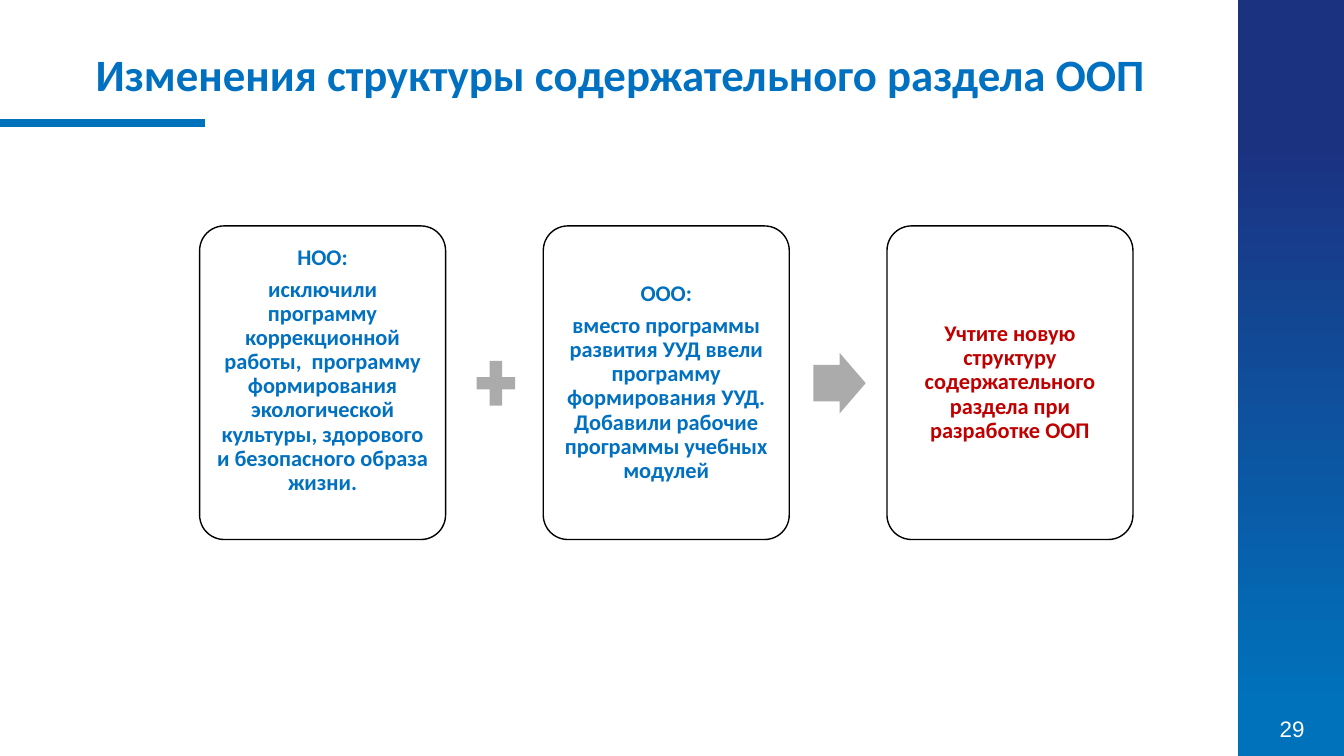
from lxml.etree import SubElement
from pptx import Presentation
from pptx.dml.color import RGBColor
from pptx.enum.shapes import MSO_CONNECTOR, MSO_SHAPE
from pptx.enum.text import MSO_ANCHOR, PP_ALIGN
from pptx.oxml.ns import qn
from pptx.util import Pt

BLUE = "0070C0"
RED = "C00000"
WHITE = "FFFFFF"
GREY = "ABABAB"
CARD_LEFT, CARD_TOP, CARD_WIDTH, CARD_HEIGHT = 142.6, 161.4, 175.7, 224
CARD_STEP = 245.5
SIGN_LEFT, SIGN_TOP, SIGN_WIDTH, SIGN_HEIGHT = 335.5, 252, 37.4, 43.4
CARD_INSET = 5
BLANK_LINE = 17.5

CARDS = [
    (["НОО:", "исключили программу коррекционной работы,  программу формирования "
      "экологической культуры, здорового и безопасного образа жизни."], BLUE, BLANK_LINE),
    (["ООО:", "вместо программы развития УУД ввели программу формирования УУД. "
      "Добавили рабочие программы учебных модулей"], BLUE, 0),
    (["Учтите новую структуру содержательного раздела при разработке ООП"], RED, 0),
]
SIGNS = [MSO_SHAPE.MATH_PLUS, MSO_SHAPE.RIGHT_ARROW]

TITLE_FONT = {"name": "Calibri", "size": Pt(32), "bold": True}
CARD_FONT = {"name": "Calibri", "size": Pt(16), "bold": True}
NUMBER_FONT = {"name": "Arial", "size": Pt(16), "bold": False}
CARD_PARAGRAPH = {"alignment": PP_ALIGN.CENTER, "line_spacing": 0.9, "space_after": Pt(5.6)}


def color(value):
    return RGBColor.from_string(value)


def apply(target, values):
    for name, value in values.items():
        setattr(target, name, value)


def write(shape, texts, font, font_color, paragraph_format, frame_format):
    frame = shape.text_frame
    apply(frame, {"word_wrap": True, **frame_format})
    frame.text = "\n".join(texts)
    for paragraph in frame.paragraphs:
        apply(paragraph, paragraph_format)
        apply(paragraph.font, font)
        paragraph.font.color.rgb = color(font_color)


def add_shape(slide, kind, left, top, width, height, fill=None):
    shape = slide.shapes.add_shape(kind, Pt(left), Pt(top), Pt(width), Pt(height))
    shape.shadow.inherit = False
    shape.line.fill.background()
    if fill:
        shape.fill.solid()
        shape.fill.fore_color.rgb = color(fill)
    return shape


def add_side_band(slide):
    band = add_shape(slide, MSO_SHAPE.RECTANGLE, 884.2, 0, 75.8, 540)
    band.fill.gradient()
    band.fill.gradient_angle = 90
    stops = [(0.06, "0072BC"), (0.82, "1B3281")]
    for stop, (position, value) in zip(band.fill.gradient_stops, stops):
        stop.position = position
        stop.color.rgb = color(value)


def add_text(slide, text, left, top, width, height, font, font_color, alignment, anchor):
    box = slide.shapes.add_textbox(Pt(left), Pt(top), Pt(width), Pt(height))
    write(box, [text], font, font_color, {"alignment": alignment}, {"vertical_anchor": anchor})


def add_title_rule(slide):
    rule = slide.shapes.add_connector(MSO_CONNECTOR.STRAIGHT, Pt(0), Pt(88), Pt(146.4), Pt(88))
    rule.line.color.rgb = color("0072BC")
    rule.line.width = Pt(6)
    SubElement(rule._element.spPr, qn("a:effectLst"))


def add_card(slide, index, texts, font_color, extra_bottom):
    card = add_shape(slide, MSO_SHAPE.ROUNDED_RECTANGLE, CARD_LEFT + index * CARD_STEP,
                     CARD_TOP, CARD_WIDTH, CARD_HEIGHT, WHITE)
    card.adjustments[0] = 0.1
    card.line.color.rgb = color("000000")
    card.line.width = Pt(1)
    frame_format = {
        "vertical_anchor": MSO_ANCHOR.MIDDLE,
        "margin_left": Pt(CARD_INSET),
        "margin_right": Pt(CARD_INSET),
        "margin_top": Pt(CARD_INSET),
        "margin_bottom": Pt(CARD_INSET + extra_bottom),
    }
    write(card, texts, CARD_FONT, font_color, CARD_PARAGRAPH, frame_format)


def add_sign(slide, index, kind):
    sign = add_shape(slide, kind, SIGN_LEFT + index * CARD_STEP, SIGN_TOP,
                     SIGN_WIDTH, SIGN_HEIGHT, GREY)
    if kind == MSO_SHAPE.RIGHT_ARROW:
        sign.adjustments[0] = 0.6


def main():
    presentation = Presentation()
    presentation.slide_width = Pt(960)
    presentation.slide_height = Pt(540)
    slide = presentation.slides.add_slide(presentation.slide_layouts[6])
    add_side_band(slide)
    add_text(slide, "29", 894.2, 505.4, 57.6, 29.5, NUMBER_FONT, WHITE,
             PP_ALIGN.CENTER, MSO_ANCHOR.MIDDLE)
    add_title_rule(slide)
    add_text(slide, "Изменения структуры содержательного раздела ООП", 61.2, 29.5, 817.2, 46,
             TITLE_FONT, BLUE, PP_ALIGN.LEFT, MSO_ANCHOR.TOP)
    for index, card in enumerate(CARDS):
        add_card(slide, index, *card)
    for index, kind in enumerate(SIGNS):
        add_sign(slide, index, kind)
    presentation.save("out.pptx")


if __name__ == "__main__":
    main()
